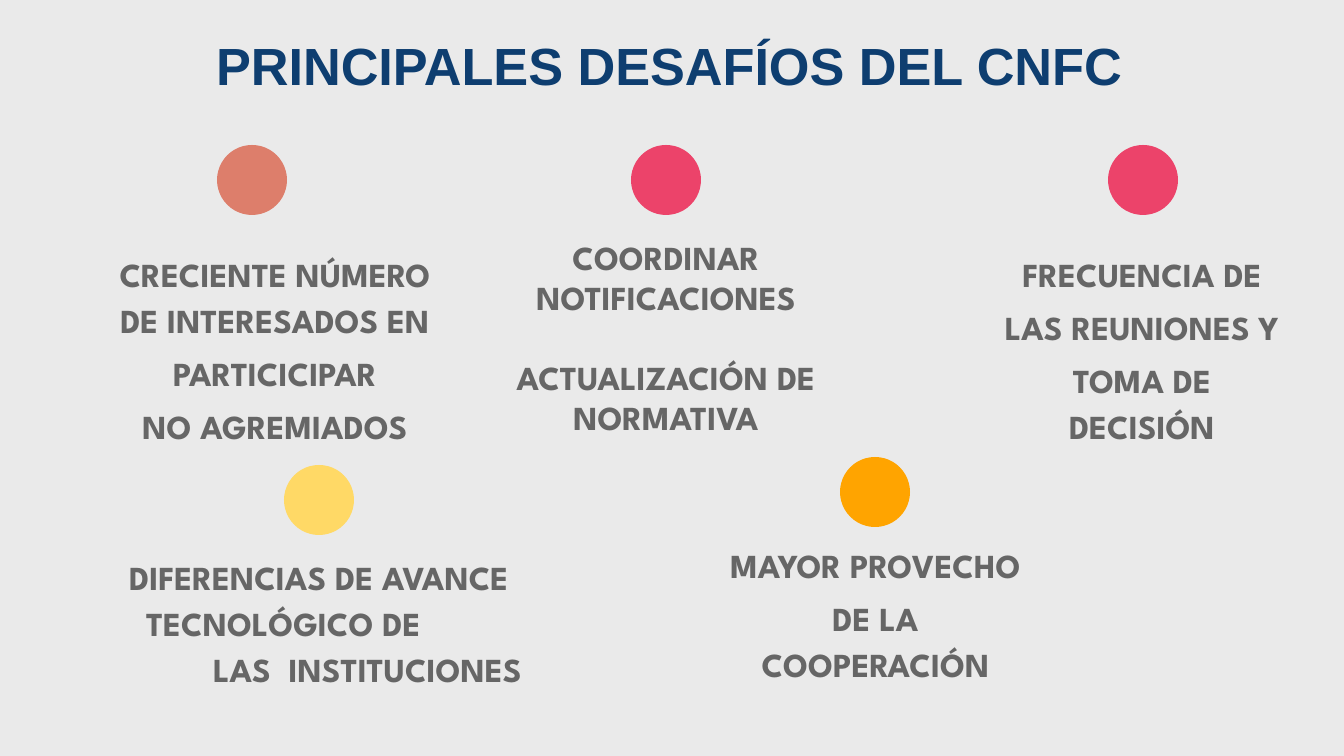
from pptx import Presentation
from pptx.dml.color import RGBColor
from pptx.enum.shapes import MSO_SHAPE as Shape
from pptx.enum.text import MSO_ANCHOR as Anchor, MSO_AUTO_SIZE as AutoSize, PP_ALIGN as Align
from pptx.oxml.ns import qn
from pptx.util import Emu, Pt
from lxml.etree import SubElement

EMU_PER_PX = 914400 / 134.4
DOT = 70
TITLE = "PRINCIPALES DESAFÍOS DEL CNFC"
PINK = "ED0036"

# left, top, colour, opacity in percent
DOTS = [
    (840, 457, "FFA400", 100),
    (217, 145, "DD7E6B", 100),
    (1108, 145, PINK, 71),
    (284, 465, "FFD966", 100),
    (631, 145, PINK, 71),
]

# Each line: text, space before in points, left indent in px (None centres it)
CHALLENGES = [
    {"place": (116, 544, 443, 132), "spacing": 1.15, "lines": [
        ("DIFERENCIAS DE AVANCE", 0, 0),
        ("TECNOLÓGICO DE", 0, 17),
        ("LAS  INSTITUCIONES", 0, 84)]},
    {"place": (708, 532, 335, 156), "spacing": 1.15, "lines": [
        ("MAYOR PROVECHO", 3.6, None),
        ("DE LA COOPERACIÓN", 3.6, None)]},
    {"place": (90, 241, 370, 142), "spacing": 1.15, "lines": [
        ("CRECIENTE NÚMERO DE INTERESADOS EN", 3.6, None),
        ("PARTICICIPAR", 3.6, None),
        ("NO AGREMIADOS", 3.6, None)]},
    {"place": (989, 241, 306, 117), "spacing": 1.15, "lines": [
        ("FRECUENCIA DE", 3.6, None),
        ("LAS REUNIONES Y", 3.6, None),
        ("TOMA DE DECISIÓN", 3.6, None)]},
    {"place": (492, 230, 348, 218), "spacing": 1, "lines": [
        ("COORDINAR", 0, None),
        ("NOTIFICACIONES", 0, None),
        ("ACTUALIZACIÓN DE", 21, None),
        ("NORMATIVA", 0, None)]},
]


def px(length):
    return Emu(round(length * EMU_PER_PX))


def color(value):
    return RGBColor.from_string(value)


def style(para, font_name, size, ink):
    font = para.font
    font.name, font.size, font.bold = font_name, Pt(size), True
    font.color.rgb = color(ink)


def add_title(page):
    title = page.shapes.title
    title.left, title.top, title.width, title.height = map(px, (-3, 0, 1344, 130))
    frame = title.text_frame
    frame.text = TITLE
    frame.auto_size = AutoSize.NONE
    frame.vertical_anchor = Anchor.MIDDLE
    para = frame.paragraphs[0]
    para.alignment = Align.CENTER
    style(para, "Arial", 28, "0E3E70")


def add_dot(page, left, top, fill, opacity):
    dot = page.shapes.add_shape(Shape.OVAL, px(left), px(top), px(DOT), px(DOT))
    dot.shadow.inherit = False
    dot.line.fill.background()
    dot.fill.solid()
    dot.fill.fore_color.rgb = color(fill)
    if opacity < 100:
        tint = dot.fill._xPr.find(qn("a:solidFill"))[0]
        SubElement(tint, qn("a:alpha")).set("val", str(opacity * 1000))


def add_challenge(page, place, spacing, lines):
    frame = page.shapes.add_textbox(*map(px, place)).text_frame
    frame.word_wrap = True
    for index, (text, before, indent) in enumerate(lines):
        para = frame.add_paragraph() if index else frame.paragraphs[0]
        para.text = text
        para.line_spacing = spacing
        para.space_before = Pt(before)
        if indent is None:
            para.alignment = Align.CENTER
        else:
            para.alignment = Align.LEFT
            para._p.get_or_add_pPr().set("marL", str(px(indent)))
        style(para, "League Spartan", 18, "666666")


def main():
    deck = Presentation()
    deck.slide_width, deck.slide_height = px(1344), px(756)
    page = deck.slides.add_slide(deck.slide_layouts[5])
    page.background.fill.solid()
    page.background.fill.fore_color.rgb = color("EAEAEA")
    add_title(page)
    for dot in DOTS:
        add_dot(page, *dot)
    for challenge in CHALLENGES:
        add_challenge(page, **challenge)
    deck.save("out.pptx")


if __name__ == "__main__":
    main()
